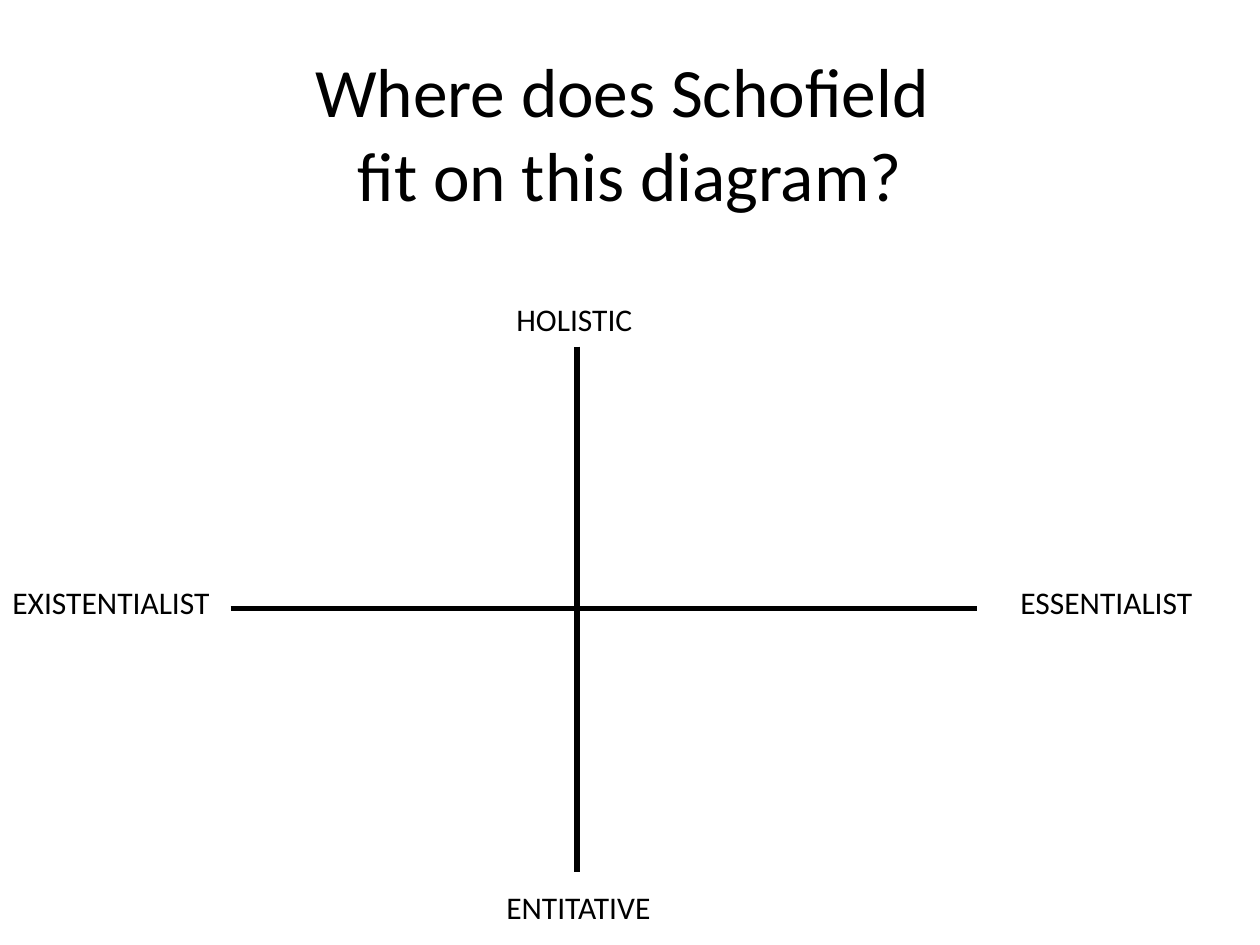
from lxml import etree
from pptx import Presentation
from pptx.dml.color import RGBColor
from pptx.enum import shapes, text
from pptx.oxml import ns
from pptx.util import Inches, Pt

COLORS = {"ink": "000000", "background": "FFFFFF"}
FONT = "Calibri"

TITLE = ["Where does Schofield ", "fit on this diagram?"]
TITLE_BOX = (0.5, 0.42, 9, 1.25)

# Label, left, top, width
LABELS = [
    ("HOLISTIC", 4, 2.33, 1.42),
    ("ENTITATIVE", 3.92, 7, 1.42),
    ("EXISTENTIALIST", 0, 4.58, 2),
    ("ESSENTIALIST", 8, 4.58, 1.58),
]
LABEL_HEIGHT = 0.4

CENTER_X, CENTER_Y = 4.58, 4.83
AXES = [
    (CENTER_X, 2.75, CENTER_X, 6.92),
    (1.83, CENTER_Y, 7.75, CENTER_Y),
]


def add_text(slide, lines, box, size, align, anchor):
    """Add one paragraph whose lines are separated by line breaks."""
    tf = slide.shapes.add_textbox(*map(Inches, box)).text_frame
    tf.word_wrap = True
    tf.vertical_anchor = anchor
    p = tf.paragraphs[0]
    p.alignment = align
    for i, line in enumerate(lines):
        if i:
            p.add_line_break()
        r = p.add_run()
        r.text = line
        r.font.name = FONT
        r.font.size = Pt(size)
        r.font.color.rgb = RGBColor.from_string(COLORS["ink"])
    return tf


def add_axis(slide, ends):
    axis = slide.shapes.add_connector(
        shapes.MSO_CONNECTOR.STRAIGHT, *map(Inches, ends))
    axis.line.color.rgb = RGBColor.from_string(COLORS["ink"])
    axis.line.width = Pt(3)
    etree.SubElement(axis._element.spPr, ns.qn("a:effectLst"))


def main():
    prs = Presentation()
    prs.slide_width, prs.slide_height = Inches(10), Inches(7.5)
    s = prs.slides.add_slide(prs.slide_layouts[6])
    s.background.fill.solid()
    s.background.fill.fore_color.rgb = RGBColor.from_string(COLORS["background"])

    add_text(s, TITLE, TITLE_BOX, 39.6,
             text.PP_ALIGN.CENTER, text.MSO_ANCHOR.MIDDLE)
    for ends in AXES:
        add_axis(s, ends)
    for label, left, top, width in LABELS:
        tf = add_text(s, [label], (left, top, width, LABEL_HEIGHT), 18,
                      text.PP_ALIGN.LEFT, text.MSO_ANCHOR.TOP)
        tf.auto_size = text.MSO_AUTO_SIZE.SHAPE_TO_FIT_TEXT

    prs.save("out.pptx")


if __name__ == "__main__":
    main()
